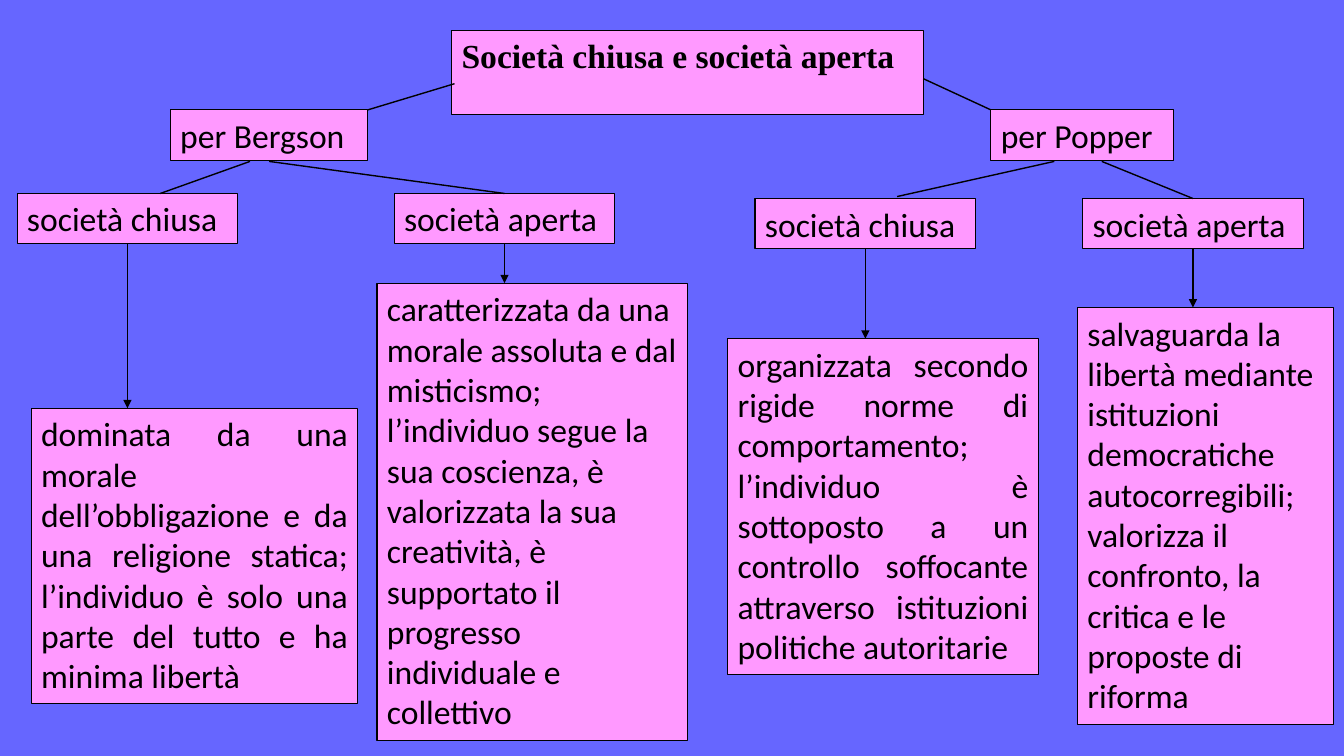
from dataclasses import dataclass

from lxml import etree
from pptx import Presentation
from pptx.dml.color import RGBColor
from pptx.enum.shapes import MSO_CONNECTOR, MSO_SHAPE
from pptx.enum.text import MSO_ANCHOR, MSO_AUTO_SIZE, PP_ALIGN
from pptx.oxml.ns import qn
from pptx.util import Pt

STRAIGHT = MSO_CONNECTOR.STRAIGHT
RECTANGLE = MSO_SHAPE.RECTANGLE
TOP = MSO_ANCHOR.TOP
GROW = MSO_AUTO_SIZE.SHAPE_TO_FIT_TEXT
LEFT, JUSTIFY = PP_ALIGN.LEFT, PP_ALIGN.JUSTIFY
TOP_SIDE, BOTTOM_SIDE = 0, 2


@dataclass(frozen=True)
class Theme:
    background: RGBColor = RGBColor(0x66, 0x66, 0xFF)
    panel: RGBColor = RGBColor(0xFF, 0x99, 0xFF)
    ink: RGBColor = RGBColor(0, 0, 0)
    title_font: str = "Times New Roman"
    body_font: str = "Calibri"
    text_size: float = 24
    border: float = 0.75
    link: float = 1
    label_height: float = 36
    concept_width: float = 157.7


@dataclass(frozen=True)
class Concept:
    label: str
    left: float
    fork_x: float
    link_end: tuple
    detail_box: tuple
    detail: str
    align: PP_ALIGN


@dataclass(frozen=True)
class Thinker:
    name: str
    box: tuple
    name_left: float
    name_width: float
    concept_top: float
    concepts: tuple


THEME = Theme()
TITLE_BOX = (322.5, 21.6, 337, THEME.label_height)

BERGSON = Thinker(
    "per Bergson", (12.2, 78.5), 109.5, 141, 59.7,
    (
        Concept(
            "società chiusa", 0, 166.4, (102.3, 59.7),
            (10.1, 213.1, 233.3, 211),
            "dominata da una morale dell’obbligazione e da una religione statica; "
            "l’individuo è solo una parte del tutto e ha minima libertà",
            JUSTIFY,
        ),
        Concept(
            "società aperta", 269.3, 180, None,
            (257.1, 123.8, 221.8, 326.9),
            "caratterizzata da una morale assoluta e dal misticismo; "
            "l’individuo segue la sua coscienza, è valorizzata la sua creatività, "
            "è supportato il progresso individuale e collettivo",
            LEFT,
        ),
    ),
)

POPPER = Thinker(
    "per Popper", (519.8, 78.5), 188, 130.3, 63.3,
    (
        Concept(
            "società chiusa", 19.5, 233.3, (121, 61.9),
            (0, 163.4, 221.8, 239.8),
            "organizzata secondo rigide norme di comportamento; "
            "l’individuo è sottoposto a un controllo soffocante "
            "attraverso istituzioni politiche autoritarie",
            JUSTIFY,
        ),
        Concept(
            "società aperta", 253.5, 267.2, None,
            (249.9, 141.1, 182.9, 298),
            "salvaguarda la libertà mediante istituzioni democratiche "
            "autocorregibili; valorizza il confronto, la critica "
            "e le proposte di riforma",
            LEFT,
        ),
    ),
)


def style_panel(panel, text, font_name, align=LEFT, bold=False):
    panel.fill.solid()
    panel.fill.fore_color.rgb = THEME.panel
    panel.line.color.rgb = THEME.ink
    panel.line.width = Pt(THEME.border)
    frame = panel.text_frame
    frame.text = text
    frame.word_wrap = True
    frame.auto_size = GROW
    frame.vertical_anchor = TOP
    paragraph = frame.paragraphs[0]
    paragraph.alignment = align
    font = paragraph.runs[0].font
    font.name = font_name
    font.size = Pt(THEME.text_size)
    font.bold = bold
    font.color.rgb = THEME.ink


def add_panel(slide, box, text, align=LEFT):
    panel = slide.shapes.add_shape(RECTANGLE, *map(Pt, box))
    panel.shadow.inherit = False
    style_panel(panel, text, THEME.body_font, align)
    return panel


def add_link(slide, start, end, arrow=False):
    link = slide.shapes.add_connector(STRAIGHT, *map(Pt, start + end))
    link.line.color.rgb = THEME.ink
    link.line.width = Pt(THEME.link)
    if arrow:
        line = link.line._get_or_add_ln()
        etree.SubElement(line, qn("a:tailEnd"), type="triangle")
    etree.SubElement(link._element.spPr, qn("a:effectLst"))
    return link


def add_title(slide, box):
    title = slide.shapes.title
    title.left, title.top, title.width, title.height = map(Pt, box)
    style_panel(title, "Società chiusa e società aperta", THEME.title_font, bold=True)


def add_concept(slide, box, concept, concept_top):
    left, top = box
    label_left, label_top = left + concept.left, top + concept_top
    centre = label_left + THEME.concept_width / 2
    label_box = (label_left, label_top, THEME.concept_width, THEME.label_height)
    label = add_panel(slide, label_box, concept.label)

    detail_left, detail_top, width, height = concept.detail_box
    detail_box = (left + detail_left, top + detail_top, width, height)
    add_panel(slide, detail_box, concept.detail, concept.align)

    fork = (left + concept.fork_x, top + THEME.label_height + 0.8)
    if concept.link_end:
        end_x, end_y = concept.link_end
        add_link(slide, fork, (left + end_x, top + end_y))
    else:
        add_link(slide, fork, (centre, label_top)).end_connect(label, TOP_SIDE)

    arrow = add_link(
        slide, (centre, label_top + THEME.label_height),
        (centre, top + detail_top), arrow=True,
    )
    arrow.begin_connect(label, BOTTOM_SIDE)


def add_thinker(slide, thinker):
    left, top = thinker.box
    name_box = (left + thinker.name_left, top, thinker.name_width, THEME.label_height)
    add_panel(slide, name_box, thinker.name)
    for concept in thinker.concepts:
        add_concept(slide, thinker.box, concept, thinker.concept_top)
    return name_box


def main():
    deck = Presentation()
    deck.slide_width, deck.slide_height = Pt(960), Pt(540)
    slide = deck.slides.add_slide(deck.slide_layouts[5])
    slide.background.fill.solid()
    slide.background.fill.fore_color.rgb = THEME.background

    add_title(slide, TITLE_BOX)
    bergson_left, bergson_top, bergson_width, _ = add_thinker(slide, BERGSON)
    popper_left, popper_top, _, _ = add_thinker(slide, POPPER)

    title_left, title_top, title_width, title_height = TITLE_BOX
    title_bottom = title_top + title_height
    add_link(
        slide, (title_left + 2.2, title_bottom + 2.2),
        (bergson_left + bergson_width, bergson_top),
    )
    add_link(
        slide, (title_left + title_width, title_bottom - 1.4),
        (popper_left, popper_top),
    )
    deck.save("out.pptx")


if __name__ == "__main__":
    main()
